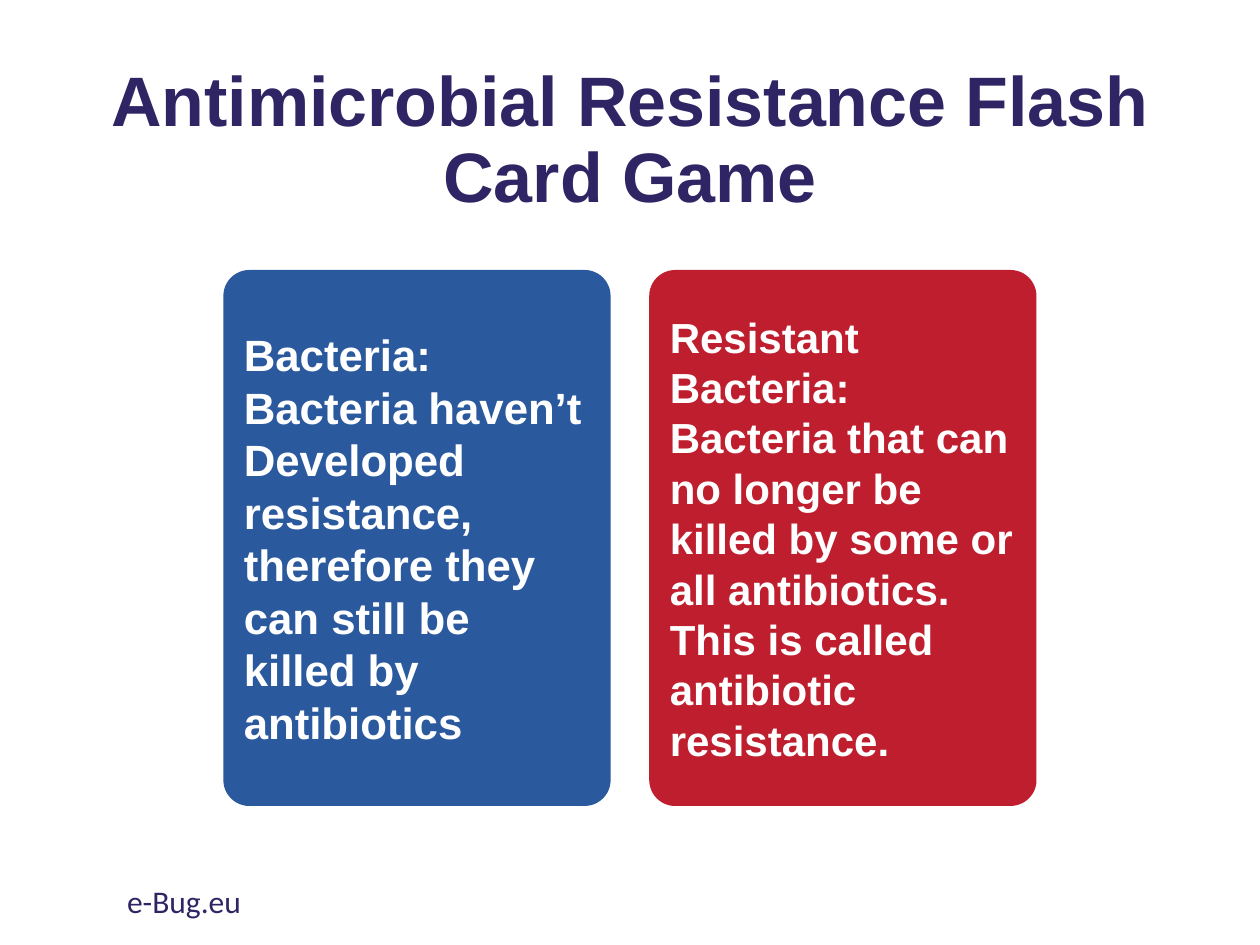
from pptx import Presentation
from pptx.dml.color import RGBColor
from pptx.enum.shapes import MSO_SHAPE
from pptx.enum.text import MSO_ANCHOR, PP_ALIGN
from pptx.util import Inches, Pt

ROUNDED = MSO_SHAPE.ROUNDED_RECTANGLE
MIDDLE = MSO_ANCHOR.MIDDLE
LEFT, CENTER = PP_ALIGN.LEFT, PP_ALIGN.CENTER
NAVY, BLUE, RED, WHITE = "302564", "2B599E", "BE1E2D", "FFFFFF"

CARD_WIDTH, CARD_STEP = 3.06, 3.38
CARDS = [
    (BLUE, 25, [
        "Bacteria:",
        "Bacteria haven’t",
        "Developed resistance, therefore they can still be killed by antibiotics",
    ]),
    (RED, 24, [
        "Resistant Bacteria:",
        "Bacteria that can no longer be killed by some or all antibiotics. "
        "This is called antibiotic resistance.",
    ]),
]


def color(hex_string):
    """Turn a hex string into a colour."""
    return RGBColor.from_string(hex_string)


def write(frame, lines, size, hex_string, font="Arial", bold=True, align=LEFT):
    """Fill a text frame with one paragraph for each line."""
    frame.word_wrap = True
    for index, line in enumerate(lines):
        para = frame.add_paragraph() if index else frame.paragraphs[0]
        para.text = line
        para.alignment = align
        para.font.name = font
        para.font.size = Pt(size)
        para.font.bold = bold
        para.font.color.rgb = color(hex_string)


def place_title(page, left, top, width, height):
    """Place the slide title in its placeholder."""
    title = page.shapes.title
    title.left, title.top = Inches(left), Inches(top)
    title.width, title.height = Inches(width), Inches(height)
    frame = title.text_frame
    frame.vertical_anchor = MIDDLE
    write(frame, ["Antimicrobial Resistance Flash Card Game"], 40, NAVY, align=CENTER)
    frame.paragraphs[0].line_spacing = 0.9


def add_card(page, left, top, width, height, fill, size, lines):
    """Draw one flash card with its definition."""
    card = page.shapes.add_shape(
        ROUNDED, Inches(left), Inches(top), Inches(width), Inches(height))
    card.adjustments[0] = 0.065
    card.shadow.inherit = False
    card.fill.solid()
    card.fill.fore_color.rgb = color(fill)
    card.line.color.rgb = color(fill)
    card.line.width = Pt(1)
    card.text_frame.vertical_anchor = MIDDLE
    write(card.text_frame, lines, size, WHITE)


def add_footer(page, left, top, width, height):
    """Write the site address at the foot of the slide."""
    box = page.shapes.add_textbox(
        Inches(left), Inches(top), Inches(width), Inches(height))
    write(box.text_frame, ["e-Bug.eu"], 18, NAVY, font="Calibri", bold=False)


def main():
    """Build and save the deck."""
    deck = Presentation()
    deck.slide_width, deck.slide_height = Inches(10), Inches(7.5)
    page = deck.slides.add_slide(deck.slide_layouts[5])
    place_title(page, 0.69, 0.4, 8.62, 1.45)
    for index, (fill, size, lines) in enumerate(CARDS):
        add_card(page, 1.78 + index * CARD_STEP, 2.15, CARD_WIDTH, 4.24, fill, size, lines)
    add_footer(page, 0.91, 6.95, 3.38, 0.4)
    deck.save("out.pptx")


if __name__ == "__main__":
    main()
